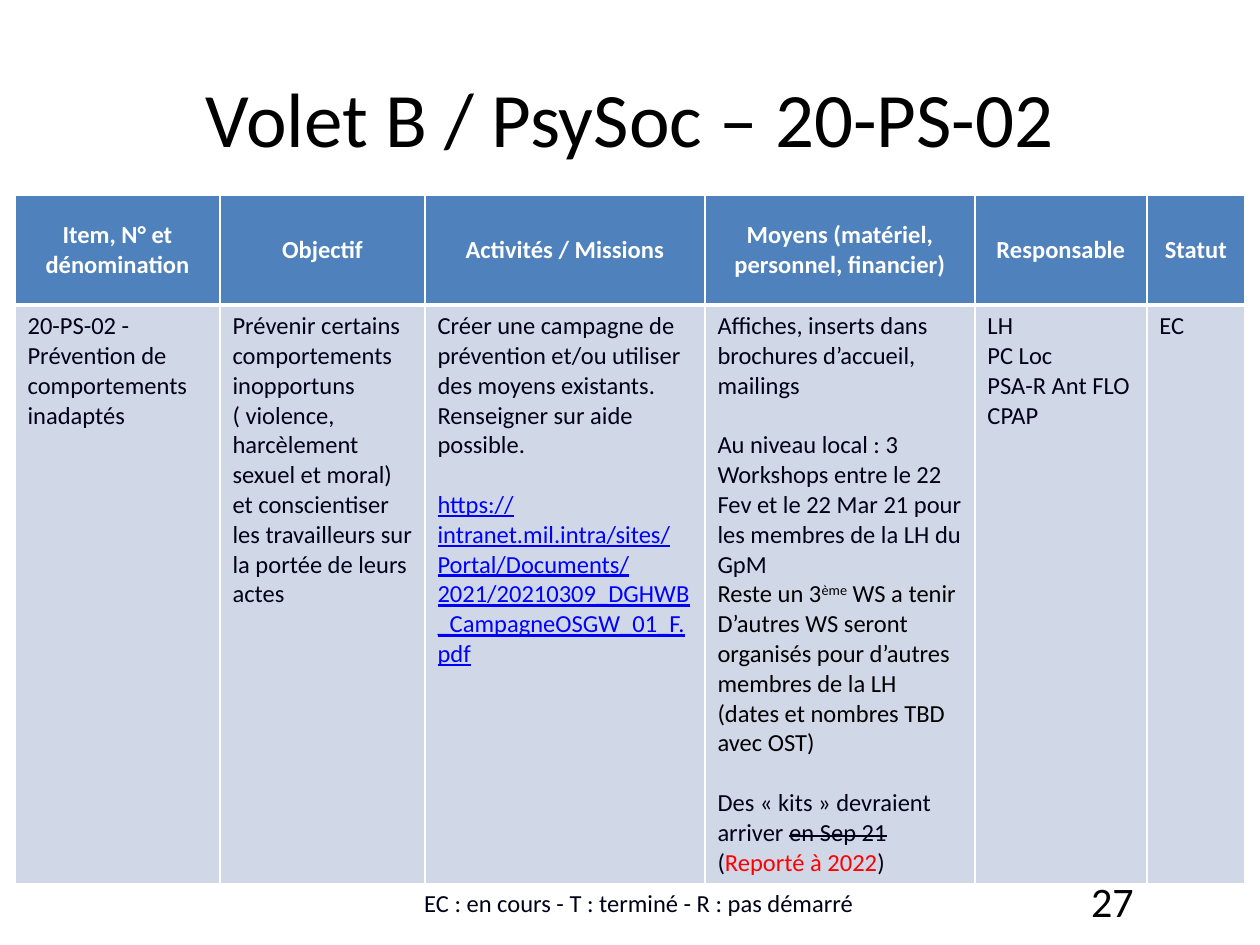
from lxml import etree
from pptx import Presentation
from pptx.dml.color import RGBColor
from pptx.enum.text import MSO_ANCHOR, PP_ALIGN
from pptx.oxml.ns import qn
from pptx.util import Emu, Pt

LEFT, CENTER, RIGHT = PP_ALIGN.LEFT, PP_ALIGN.CENTER, PP_ALIGN.RIGHT
TOP, MIDDLE, BOTTOM = MSO_ANCHOR.TOP, MSO_ANCHOR.MIDDLE, MSO_ANCHOR.BOTTOM
PX_PER_INCH = 126
FONT = "Calibri"
BLACK, INK, WHITE = "000000", "000018", "FFFFFF"
BLUE, PALE, RED, LINK = "4F81BD", "D0D8E8", "FF0000", "0000FF"
BLANK_LINE = 17

COLUMN_WIDTHS = [205, 205, 280, 270, 172, 98]
ROW_HEIGHTS = [110, 571]
HEADERS = [
    "Item, N° et dénomination",
    "Objectif",
    "Activités / Missions",
    "Moyens (matériel, personnel, financier)",
    "Responsable",
    "Statut",
]
ITEM = [{"runs": [("20-PS-02 - Prévention de comportements inadaptés", {})]}]
GOAL = [
    {"runs": [("Prévenir certains comportements inopportuns ( violence, harcèlement sexuel et moral)", {})]},
    {"runs": [("et conscientiser les travailleurs sur la portée de leurs actes", {})]},
]
ACTIVITIES = [
    {"runs": [("Créer une campagne de prévention et/ou utiliser des moyens existants. "
               "Renseigner sur aide possible.", {})]},
    {"gap": BLANK_LINE,
     "runs": [("https://intranet.mil.intra/sites/Portal/Documents/2021/20210309_DGHWB_CampagneOSGW_01_F.pdf",
               {"color": LINK, "underline": True})]},
]
MEANS = [
    {"runs": [("Affiches, inserts dans brochures d’accueil, mailings", {})]},
    {"gap": BLANK_LINE,
     "runs": [("Au niveau local : 3 Workshops entre le 22 Fev et le 22 Mar 21 "
               "pour les membres de la LH du GpM", {})]},
    {"runs": [("Reste un 3", {"color": BLACK}),
              ("ème", {"color": BLACK, "xml": {"baseline": "30000"}}),
              (" WS a tenir\nD’autres WS seront organisés pour d’autres membres de la LH "
               "(dates et nombres TBD avec OST)", {"color": BLACK})]},
    {"gap": BLANK_LINE,
     "runs": [("Des « kits » devraient arriver ", {}),
              ("en Sep 21 ", {"xml": {"strike": "sngStrike"}}),
              ("(", {}), ("Reporté à 2022", {"color": RED}), (")", {})]},
]
OWNERS = [
    {"runs": [("LH\nPC Loc", {})]},
    {"runs": [("PSA-R Ant FLO", {})]},
    {"runs": [("CPAP", {})]},
]
STATUS = [{"runs": [("EC", {})]}]
BODY = [ITEM, GOAL, ACTIVITIES, MEANS, OWNERS, STATUS]


def px(length):
    """Turn pixels into EMU."""
    return Emu(round(length * 914400 / PX_PER_INCH))


def rgb(value):
    """Turn a hex string into a colour."""
    return RGBColor.from_string(value)


def add_run(paragraph, text, formats):
    """Add one run with its font settings."""
    run = paragraph.add_run()
    run.text = text
    settings = {"name": FONT, **formats}
    run.font.color.rgb = rgb(settings.pop("color"))
    for name, value in settings.pop("xml", {}).items():
        run._r.get_or_add_rPr().set(name, value)
    for name, value in settings.items():
        setattr(run.font, name, value)


def write(frame, paragraphs, base, align=LEFT):
    """Fill a text frame with formatted paragraphs."""
    frame.word_wrap = True
    for index, content in enumerate(paragraphs):
        paragraph = frame.add_paragraph() if index else frame.paragraphs[0]
        paragraph.alignment = align
        paragraph.space_before = Pt(content.get("gap", 0))
        for text, formats in content["runs"]:
            for number, line in enumerate(text.split("\n")):
                if number:
                    paragraph.add_line_break()
                add_run(paragraph, line, {**base, **formats})


def style_cell(cell, fill, anchor, borders):
    """Set the borders, fill and anchor of a table cell."""
    properties = cell._tc.get_or_add_tcPr()
    for side, width in borders.items():
        line = etree.SubElement(properties, qn(f"a:ln{side}"), w=str(Pt(width)))
        solid = etree.SubElement(line, qn("a:solidFill"))
        etree.SubElement(solid, qn("a:srgbClr"), val=WHITE)
    cell.fill.solid()
    cell.fill.fore_color.rgb = rgb(fill)
    cell.vertical_anchor = anchor


def add_title(slide, box, text):
    """Place the title placeholder."""
    title = slide.shapes.title
    title.left, title.top, title.width, title.height = map(px, box)
    title.text_frame.vertical_anchor = MIDDLE
    write(title.text_frame, [{"runs": [(text, {})]}], {"size": Pt(44), "color": BLACK}, CENTER)


def add_action_table(slide, left, top):
    """Place the table of actions."""
    box = map(px, (left, top, sum(COLUMN_WIDTHS), sum(ROW_HEIGHTS)))
    table = slide.shapes.add_table(2, len(HEADERS), *box).table
    for row, height in zip(table.rows, ROW_HEIGHTS):
        row.height = px(height)
    header_base = {"size": Pt(14), "bold": True, "color": WHITE}
    body_base = {"size": Pt(14), "bold": False, "color": INK}
    for index, (width, header, body) in enumerate(zip(COLUMN_WIDTHS, HEADERS, BODY)):
        table.columns[index].width = px(width)
        head_cell, body_cell = table.cell(0, index), table.cell(1, index)
        style_cell(head_cell, BLUE, MIDDLE, {"L": 1, "R": 1, "T": 1, "B": 3})
        style_cell(body_cell, PALE, TOP, {"L": 1, "R": 1, "T": 3, "B": 1})
        write(head_cell.text_frame, [{"runs": [(header, {})]}], header_base, CENTER)
        write(body_cell.text_frame, body, body_base)


def add_label(slide, box, text, formats, align, anchor):
    """Place a single line of text."""
    frame = slide.shapes.add_textbox(*map(px, box)).text_frame
    frame.vertical_anchor = anchor
    write(frame, [{"runs": [(text, {})]}], formats, align)


def main():
    """Build and save the slide."""
    presentation = Presentation()
    presentation.slide_width, presentation.slide_height = px(1260), px(945)
    slide = presentation.slides.add_slide(presentation.slide_layouts[5])
    add_title(slide, (63, 38, 1134, 157), "Volet B / PsySoc – 20-PS-02")
    add_action_table(slide, 15, 195)
    add_label(slide, (903, 876, 243, 50), "27", {"size": Pt(24), "color": BLACK}, RIGHT, MIDDLE)
    add_label(slide, (292, 876, 694, 48), "EC : en cours - T : terminé - R : pas démarré",
              {"size": Pt(14), "color": INK}, CENTER, BOTTOM)
    presentation.save("out.pptx")


if __name__ == "__main__":
    main()
